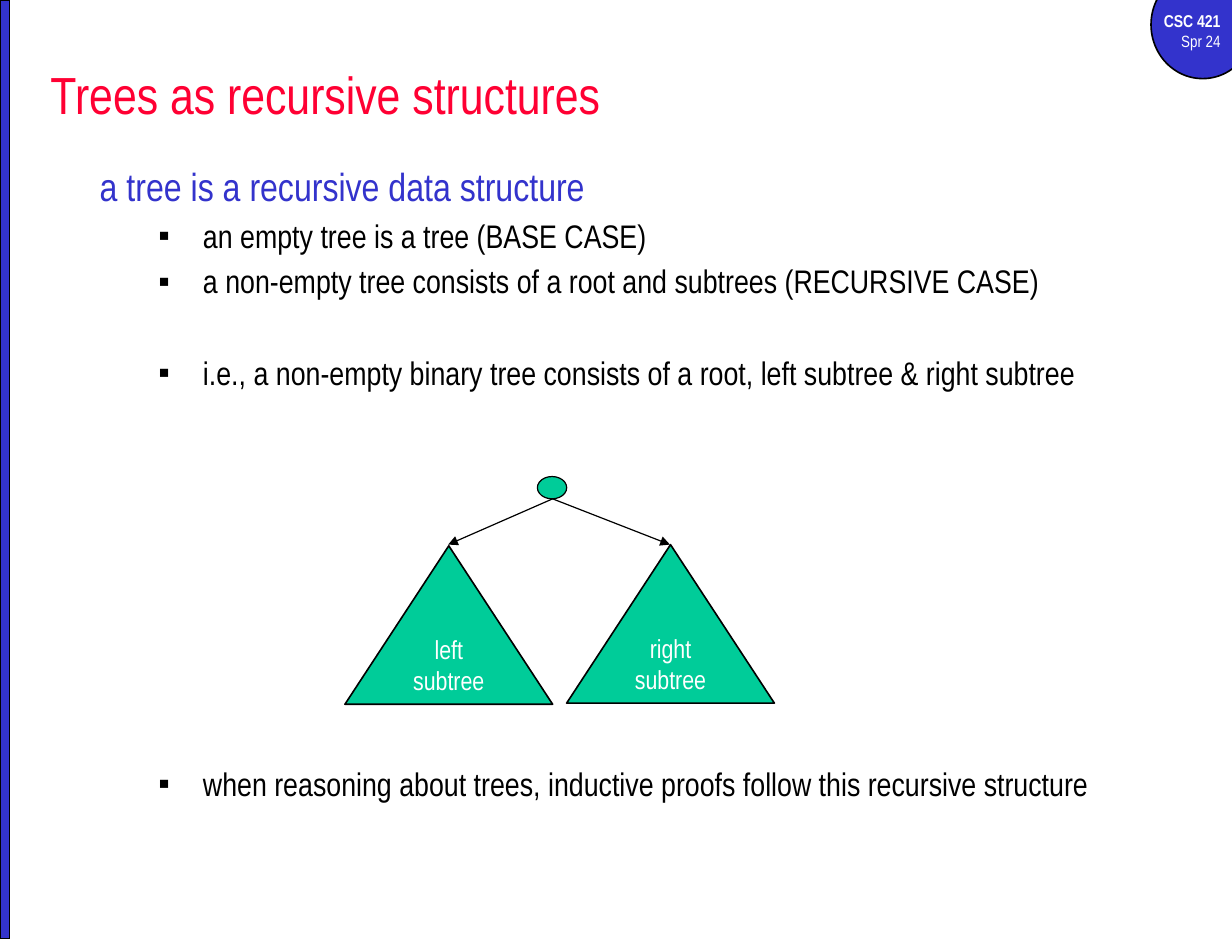
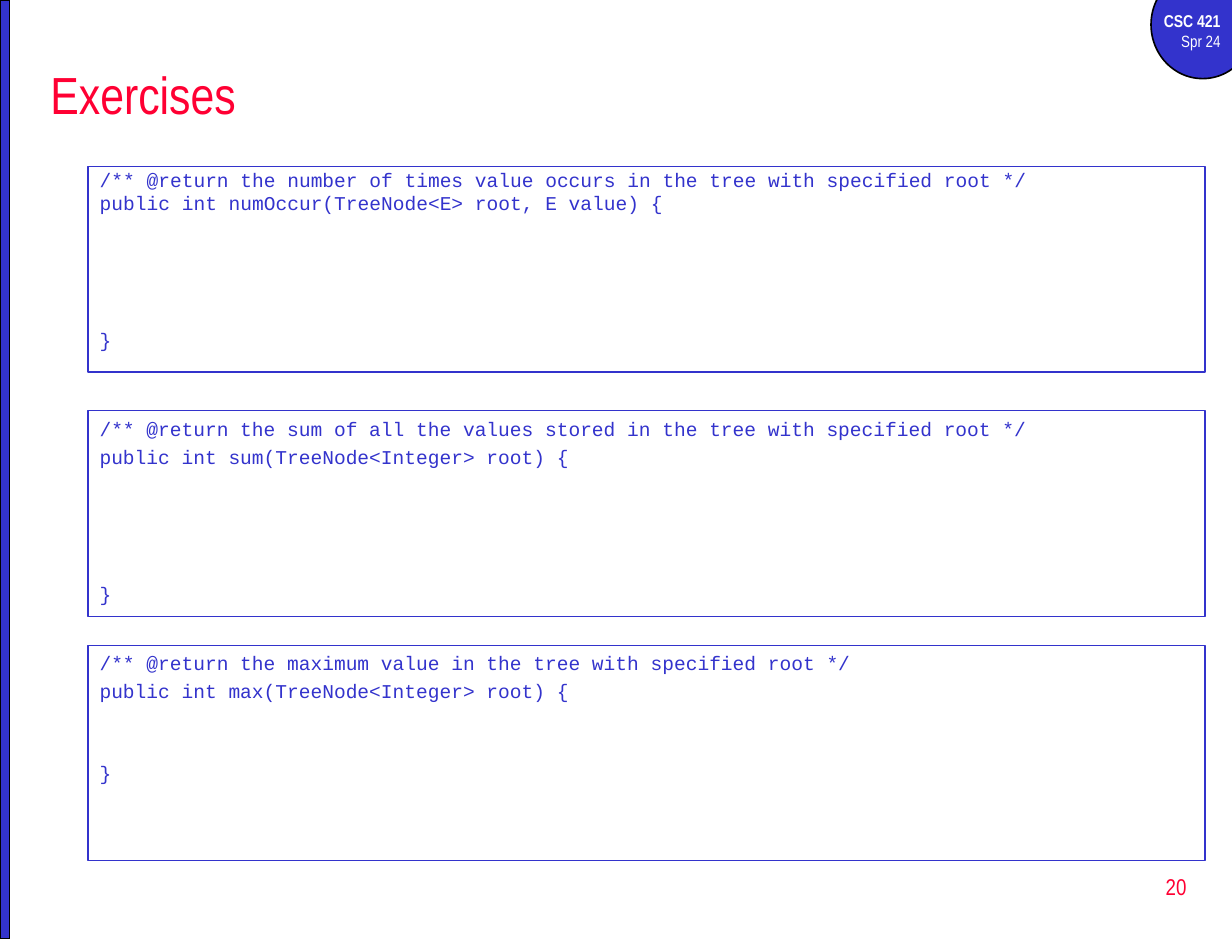
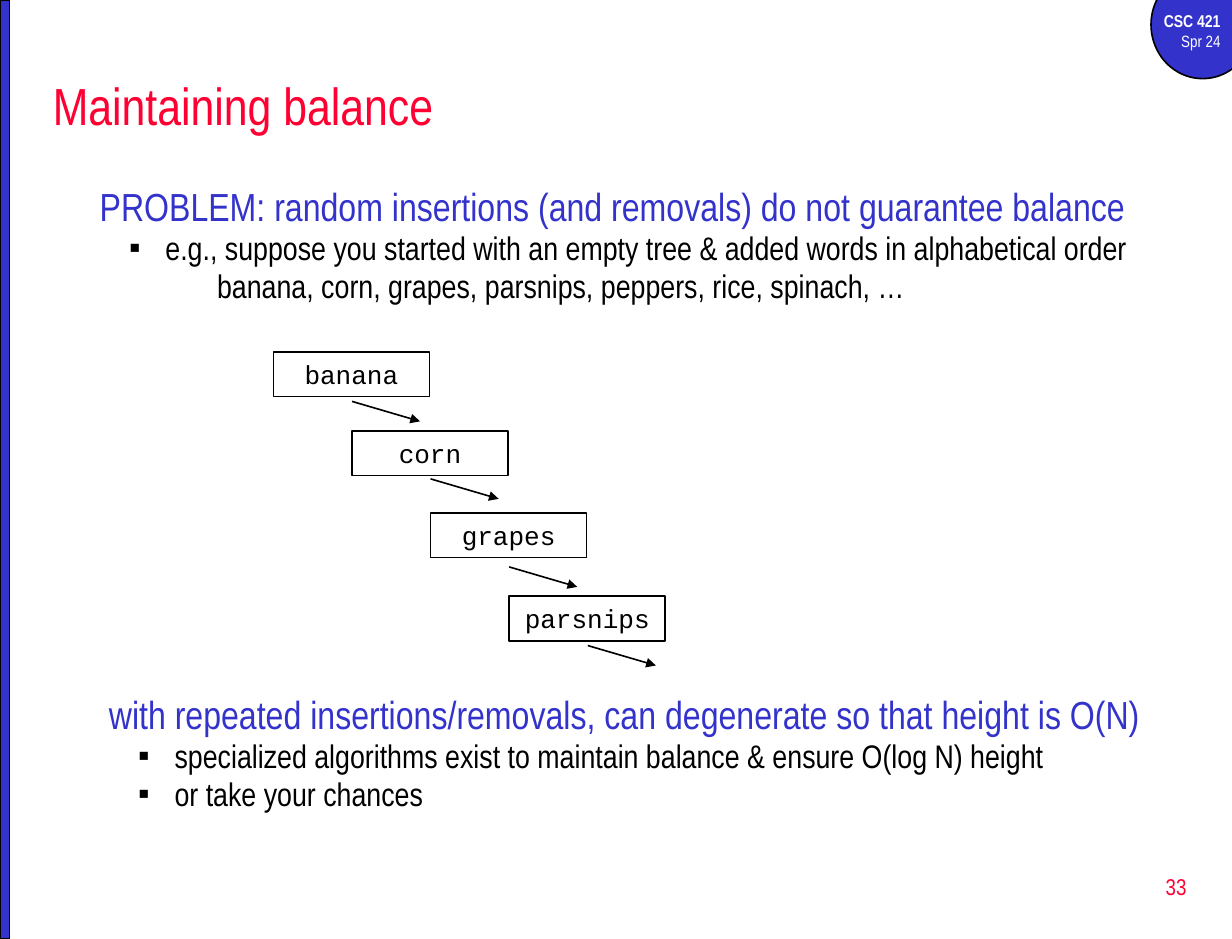
"""Build three lecture slides on recursive trees, exercises and balance."""
from lxml.etree import SubElement
from pptx import Presentation
from pptx.dml.color import RGBColor
from pptx.enum.shapes import MSO_CONNECTOR, MSO_SHAPE
from pptx.enum.text import MSO_ANCHOR, MSO_AUTO_SIZE, PP_ALIGN
from pptx.oxml.ns import qn
from pptx.util import Inches, Pt

COLORS = {
    "blue": "3333CC",
    "red": "FF0033",
    "green": "00CC99",
    "black": "000000",
    "white": "FFFFFF",
}
SANS = "Arial Narrow"
MONO = "Courier New"
STYLES = {
    "heading": dict(size=24, color="blue", gap=5.6),
    "bullet": dict(size=20, level=1, margin=0.88, indent=-0.38, mark="▪"),
    "tight bullet": dict(size=20, level=1, margin=0.56, indent=-0.31, mark="▪", spacing=0.8),
    "detail": dict(size=20, level=2, margin=1, spacing=0.8),
    "code": dict(size=12, font=MONO, color="blue", margin=0.38, indent=-0.38, gap=2.7),
    "tight code": dict(size=12, font=MONO, color="blue", margin=0.38, indent=-0.38,
                       gap=2.7, spacing=0.8),
}


def rgb(name):
    return RGBColor.from_string(COLORS[name])


def place(box, left, top, width, height):
    box.left, box.top = Inches(left), Inches(top)
    box.width, box.height = Inches(width), Inches(height)


def set_font(para, size, color, font=SANS, bold=False):
    para.font.name = font
    para.font.size = Pt(size)
    para.font.bold = bold
    para.font.color.rgb = rgb(color)


def set_bullet(para, margin, indent, mark):
    properties = para._p.get_or_add_pPr()
    properties.set("marL", str(Inches(margin)))
    properties.set("indent", str(Inches(indent)))
    if mark:
        SubElement(properties, qn("a:buFont")).set("typeface", "Arial")
        SubElement(properties, qn("a:buChar")).set("char", mark)
    else:
        SubElement(properties, qn("a:buNone"))


def format_line(para, size, color="black", font=SANS, gap=4.1, spacing=1.0,
                level=0, margin=0, indent=0, mark=None):
    para.level = level
    para.alignment = PP_ALIGN.LEFT
    para.line_spacing = spacing
    para.space_before = Pt(gap)
    para.space_after = Pt(0)
    set_font(para, size, color, font)
    set_bullet(para, margin, indent, mark)


def fill_lines(box, lines):
    """Write (style, text, optional gap) lines, one paragraph each."""
    frame = box.text_frame
    frame.word_wrap = True
    frame.auto_size = MSO_AUTO_SIZE.NONE
    frame.vertical_anchor = MSO_ANCHOR.TOP
    frame.text = "\n".join(line[1] for line in lines)
    for para, (style, _, *gap) in zip(frame.paragraphs, lines):
        settings = dict(STYLES[style])
        if gap:
            settings["gap"] = gap[0]
        format_line(para, **settings)


def add_text_box(page, bounds):
    return page.shapes.add_textbox(*map(Inches, bounds))


def add_outlined_shape(page, kind, bounds, fill=None, weight=1):
    shape = page.shapes.add_shape(kind, *map(Inches, bounds))
    shape.shadow.inherit = False
    if fill:
        shape.fill.solid()
        shape.fill.fore_color.rgb = rgb(fill)
    else:
        shape.fill.background()
    shape.line.color.rgb = rgb("black")
    shape.line.width = Pt(weight)
    return shape


def add_label(shape, text, size, color, font=SANS):
    frame = shape.text_frame
    frame.margin_left = frame.margin_right = 0
    frame.margin_top = frame.margin_bottom = 0
    frame.vertical_anchor = MSO_ANCHOR.MIDDLE
    frame.text = text
    for para in frame.paragraphs:
        para.alignment = PP_ALIGN.CENTER
        set_font(para, size, color, font)


def add_arrow(page, start, end, weight=1):
    arrow = page.shapes.add_connector(MSO_CONNECTOR.STRAIGHT, *map(Inches, start + end))
    arrow.line.color.rgb = rgb("black")
    arrow.line.width = Pt(weight)
    SubElement(arrow.line._get_or_add_ln(), qn("a:tailEnd")).set("type", "triangle")
    SubElement(arrow._element.spPr, qn("a:effectLst"))


def decorate_master(deck, page):
    """Draw the band and course badge, then move them to the slide master."""
    badge = add_outlined_shape(page, MSO_SHAPE.OVAL, (9.81, -0.25, 0.88, 0.92), "blue")
    course = add_text_box(page, (9.67, 0.04, 0.83, 0.46))
    course.text_frame.word_wrap = True
    course.text_frame.text = "CSC 421\nSpr 24"
    name, term = course.text_frame.paragraphs
    set_font(name, 10.5, "white", bold=True)
    set_font(term, 10, "white")
    name.alignment = term.alignment = PP_ALIGN.RIGHT
    band = add_outlined_shape(page, MSO_SHAPE.RECTANGLE, (0, 0, 0.08, 8), "blue")
    for shape in (badge, course, band):
        deck.slide_master.shapes.element.append(shape.element)


def add_page(deck, title, left=0.33, top=0.42, number=None):
    page = deck.slides.add_slide(deck.slide_layouts[1])
    heading = page.shapes.title
    place(heading, left, top, 9.92, 0.75)
    heading.text_frame.text = title
    heading.text_frame.auto_size = MSO_AUTO_SIZE.NONE
    heading.text_frame.vertical_anchor = MSO_ANCHOR.MIDDLE
    para = heading.text_frame.paragraphs[0]
    para.alignment = PP_ALIGN.LEFT
    set_font(para, 32, "red")
    if number:
        box = add_text_box(page, (8.02, 7.29, 2.19, 0.53))
        box.text_frame.word_wrap = True
        box.text_frame.vertical_anchor = MSO_ANCHOR.MIDDLE
        box.text_frame.text = number
        para = box.text_frame.paragraphs[0]
        para.alignment = PP_ALIGN.RIGHT
        set_font(para, 14, "red")
    return page


def fill_body(page, bounds, lines):
    body = page.placeholders[1]
    place(body, *bounds)
    fill_lines(body, lines)
    return body


def outline_code(box):
    box.line.color.rgb = rgb("blue")
    box.line.width = Pt(0.75)


def build_recursion(deck):
    page = add_page(deck, "Trees as recursive structures")
    decorate_master(deck, page)
    fill_body(page, (0.75, 1.33, 9.42, 6), [
        ("heading", "a tree is a recursive data structure"),
        ("bullet", "an empty tree is a tree (BASE CASE)"),
        ("bullet", "a non-empty tree consists of a root and subtrees (RECURSIVE CASE)"),
        ("bullet", "i.e., a non-empty binary tree consists of a root, "
                   "left subtree & right subtree", 32),
        ("bullet", "when reasoning about trees, inductive proofs follow "
                   "this recursive structure", 228),
    ])
    add_outlined_shape(page, MSO_SHAPE.OVAL, (4.58, 4.06, 0.25, 0.19), "green", 0.75)
    for side, left, top in (("left", 2.94, 4.65), ("right", 4.83, 4.64)):
        add_arrow(page, (4.71, 4.25), (left + 0.88, 4.64), 0.75)
        subtree = add_outlined_shape(page, MSO_SHAPE.ISOSCELES_TRIANGLE,
                                     (left, top, 1.77, 1.35), "green")
        add_label(subtree, f"{side}\nsubtree", 16, "white")


def build_exercises(deck):
    page = add_page(deck, "Exercises", number="20")
    outline_code(fill_body(page, (0.75, 1.42, 9.52, 1.75), [
        ("tight code", "/** @return the number of times value occurs in the tree "
                       "with specified root */"),
        ("tight code", "public int numOccur(TreeNode<E> root, E value) {"),
        ("tight code", "}", 72.5),
    ]))
    exercises = [
        (3.5, 1.75, "sum of all the values stored", "sum", 70),
        (5.5, 1.83, "maximum value", "max", 36),
    ]
    for top, height, result, method, gap in exercises:
        box = add_text_box(page, (0.75, top, 9.52, height))
        outline_code(box)
        fill_lines(box, [
            ("code", f"/** @return the {result} in the tree with specified root */"),
            ("code", f"public int {method}(TreeNode<Integer> root) {{"),
            ("code", "}", gap),
        ])


def build_balance(deck):
    page = add_page(deck, "Maintaining balance", 0.35, 0.52, "33")
    fill_body(page, (0.75, 1.5, 9.43, 1.17), [
        ("heading", "PROBLEM: random insertions (and removals) do not guarantee balance"),
        ("tight bullet", "e.g., suppose you started with an empty tree & added words "
                         "in alphabetical order"),
        ("detail", "banana, corn, grapes, parsnips, peppers, rice, spinach, …"),
    ])
    fill_lines(add_text_box(page, (0.83, 5.83, 9.43, 1.25)), [
        ("heading", "with repeated insertions/removals, can degenerate so that "
                    "height is O(N)"),
        ("tight bullet", "specialized algorithms exist to maintain balance & ensure "
                         "O(log N) height"),
        ("tight bullet", "or take your chances"),
    ])
    nodes = [("banana", 3, 3.42), ("corn", 3.67, 4.08),
             ("grapes", 4.37, 4.83), ("parsnips", 5.08, 5.5)]
    for index, (word, top, arrow_top) in enumerate(nodes):
        left = 2.33 + 0.67 * index
        node = add_outlined_shape(page, MSO_SHAPE.RECTANGLE, (left, top, 1.33, 0.38))
        add_label(node, word, 16, "black", MONO)
        add_arrow(page, (left + 0.67, arrow_top), (left + 1.25, arrow_top + 0.17))


def main():
    deck = Presentation()
    deck.slide_width, deck.slide_height = Inches(10.5), Inches(8)
    build_recursion(deck)
    build_exercises(deck)
    build_balance(deck)
    deck.save("out.pptx")


if __name__ == "__main__":
    main()
